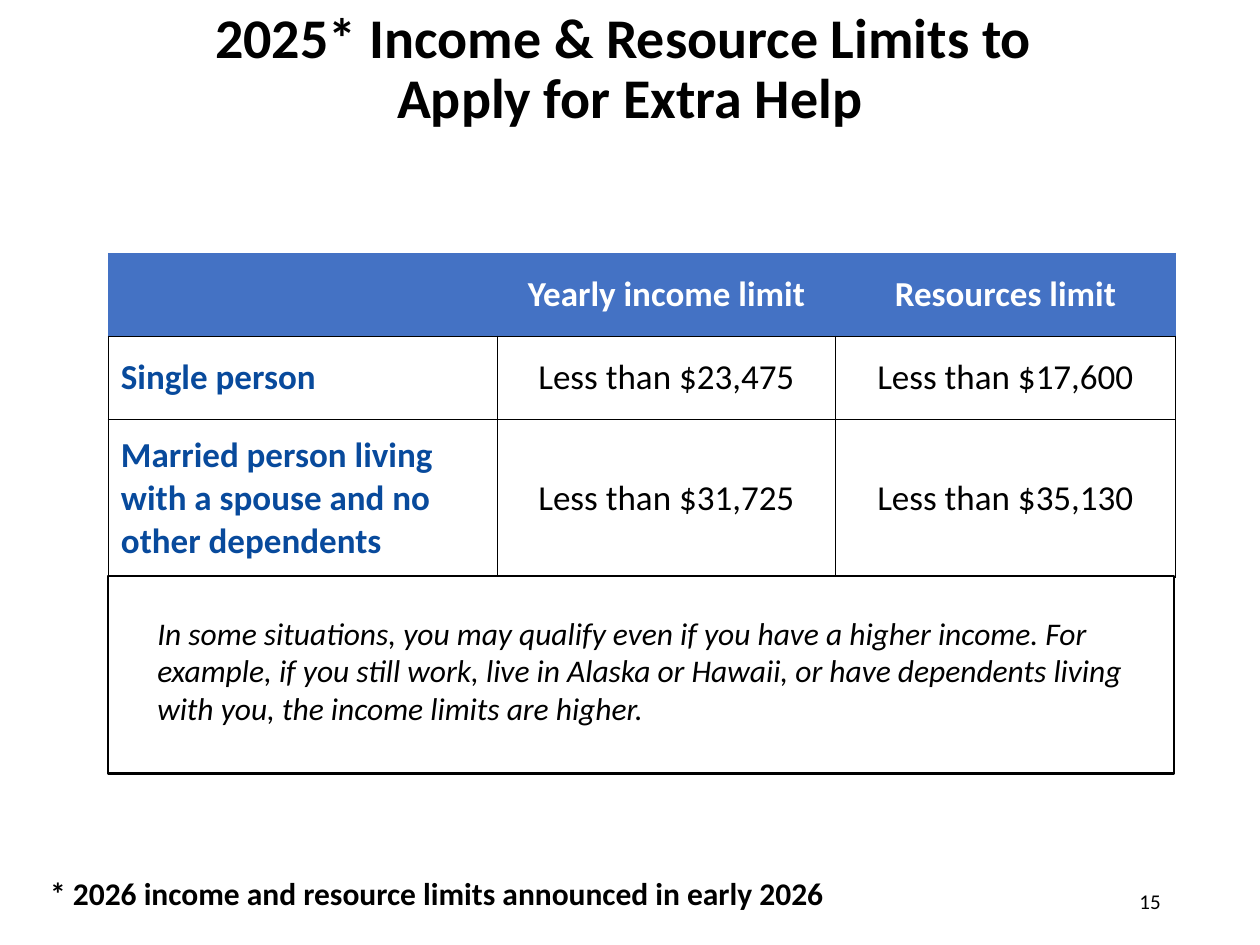
"""Build the slide on income and resource limits for Extra Help."""
from dataclasses import dataclass

import pptx
import pptx.dml.color
import pptx.enum.shapes
import pptx.enum.text
import pptx.util
from lxml import etree
from pptx.dml.color import RGBColor
from pptx.util import Inches

BLACK = RGBColor(0, 0, 0)
WHITE = RGBColor(255, 255, 255)
BLUE = RGBColor(0x44, 0x72, 0xC4)
NAVY = RGBColor(0x08, 0x4A, 0x9C)
FONT = "Calibri"
ALIGN = pptx.enum.text.PP_ALIGN
MIDDLE = pptx.enum.text.MSO_ANCHOR.MIDDLE
NS = "http://schemas.openxmlformats.org/drawingml/2006/main"

COLS = (3.09, 2.68, 2.7)
ROWS = (0.66, 0.66, 1.25)
DATA = (
    ("", "Yearly income limit", "Resources limit"),
    ("Single person", "Less than $23,475", "Less than $17,600"),
    ("Married person living with a spouse and no other dependents",
     "Less than $31,725", "Less than $35,130"),
)


@dataclass
class Style:
    size: float
    color: RGBColor = BLACK
    bold: bool = False
    italic: bool = False
    align: ALIGN = ALIGN.LEFT


@dataclass
class Note:
    text: str
    box: tuple[float, float, float, float]
    style: Style
    anchor: pptx.enum.text.MSO_ANCHOR = pptx.enum.text.MSO_ANCHOR.TOP


NOTES = (
    Note("* 2026 income and resource limits announced in early 2026",
         (0.3, 6.89, 8.46, 0.4), Style(18, bold=True)),
    Note("In some situations, you may qualify even if you have a higher "
         "income. For example, if you still work, live in Alaska or Hawaii, "
         "or have dependents living with you, the income limits are higher.",
         (1.15, 4.82, 7.99, 1.01), Style(18, italic=True)),
    Note("15", (7.06, 6.95, 2.25, 0.4), Style(12, align=ALIGN.RIGHT), MIDDLE),
)


def add_run(para, text: str, style: Style) -> None:
    para.alignment = style.align
    run = para.add_run()
    run.text = text
    font = run.font
    font.name = FONT
    font.size = pptx.util.Pt(style.size)
    font.bold = style.bold
    font.italic = style.italic
    font.color.rgb = style.color


def add_title(slide) -> None:
    title = slide.shapes.title
    title.left, title.top = Inches(0), Inches(0.18)
    title.width, title.height = Inches(10), Inches(0.76)
    frame = title.text_frame
    frame.auto_size = pptx.enum.text.MSO_AUTO_SIZE.NONE
    frame.vertical_anchor = MIDDLE
    para = frame.paragraphs[0]
    para.line_spacing = 0.9
    style = Style(32, bold=True, align=ALIGN.CENTER)
    add_run(para, "2025* Income & Resource Limits to ", style)
    para.add_line_break()
    add_run(para, "Apply for Extra Help", style)


def add_edge(cell, side: str, color: RGBColor, width: float) -> None:
    props = cell._tc.get_or_add_tcPr()
    line = etree.SubElement(props, f"{{{NS}}}ln{side}",
                            w=str(pptx.util.Pt(width)))
    fill = etree.SubElement(line, f"{{{NS}}}solidFill")
    etree.SubElement(fill, f"{{{NS}}}srgbClr", val=str(color))


def fill_cell(cell, text: str, head: bool, first: bool) -> None:
    for side in "LRTB":
        blue = head and side != "B"
        add_edge(cell, side, BLUE if blue else BLACK, 0.5 if blue else 1)
    cell.fill.solid()
    cell.fill.fore_color.rgb = BLUE if head else WHITE
    cell.vertical_anchor = MIDDLE
    color = WHITE if head else NAVY if first else BLACK
    align = ALIGN.LEFT if first else ALIGN.CENTER
    if text:
        add_run(cell.text_frame.paragraphs[0], text,
                Style(20, color, bold=head or first, align=align))


def add_grid(slide) -> None:
    grid = slide.shapes.add_table(
        len(ROWS), len(COLS), Inches(0.86), Inches(2.01),
        Inches(sum(COLS)), Inches(sum(ROWS))).table
    for col, width in zip(grid.columns, COLS):
        col.width = Inches(width)
    for row, high in zip(grid.rows, ROWS):
        row.height = Inches(high)
    for i, texts in enumerate(DATA):
        for j, text in enumerate(texts):
            fill_cell(grid.cell(i, j), text, i == 0, j == 0)


def add_frame(slide) -> None:
    rect = slide.shapes.add_shape(
        pptx.enum.shapes.MSO_SHAPE.RECTANGLE,
        Inches(0.86), Inches(4.57), Inches(8.46), Inches(1.57))
    rect.shadow.inherit = False
    rect.fill.solid()
    rect.fill.fore_color.rgb = WHITE
    rect.line.color.rgb = BLACK
    rect.line.width = pptx.util.Pt(1.25)


def add_note(slide, note: Note) -> None:
    box = slide.shapes.add_textbox(*map(Inches, note.box))
    frame = box.text_frame
    frame.word_wrap = True
    frame.vertical_anchor = note.anchor
    add_run(frame.paragraphs[0], note.text, note.style)


def main() -> None:
    deck = pptx.Presentation()
    deck.slide_width, deck.slide_height = Inches(10), Inches(7.5)
    slide = deck.slides.add_slide(deck.slide_layouts[5])
    add_title(slide)
    add_grid(slide)
    add_frame(slide)
    for note in NOTES:
        add_note(slide, note)
    deck.save("out.pptx")


if __name__ == "__main__":
    main()
